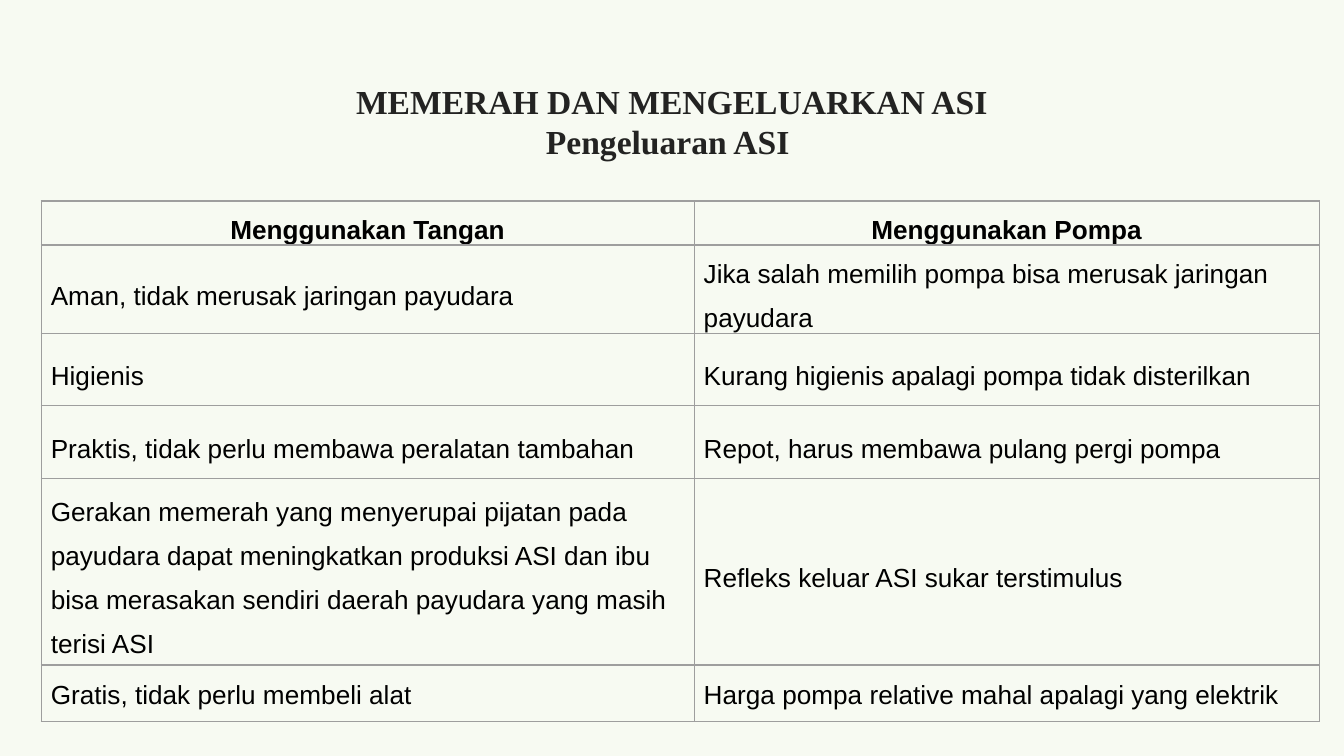
from dataclasses import dataclass

from lxml import etree
from pptx import Presentation
from pptx import util as u
from pptx.dml import color
from pptx.enum import text
from pptx.oxml import ns


@dataclass(frozen=True)
class Theme:
    background: str = "F7FAF2"
    title_color: str = "232322"
    body_color: str = "000000"
    border_color: str = "9E9E9E"
    title_font: str = "Times New Roman"
    body_font: str = "Arial"
    title_size: int = 18
    body_size: int = 14
    border_width: float = 0.75


TITLE = "MEMERAH DAN MENGELUARKAN ASI\vPengeluaran ASI "
COLUMN_WIDTHS = (12.34, 11.81)
ROWS = (
    (0.64, 1.5, "Menggunakan Tangan", "Menggunakan Pompa"),
    (1.37, 1.5, "Aman, tidak merusak jaringan payudara",
     "Jika salah memilih pompa bisa merusak jaringan payudara"),
    (1.37, 1.5, "Higienis", "Kurang higienis apalagi pompa tidak disterilkan"),
    (1.37, 1.5, "Praktis, tidak perlu membawa peralatan tambahan",
     "Repot, harus membawa pulang pergi pompa"),
    (3.53, 1.5, "Gerakan memerah yang menyerupai pijatan pada payudara dapat "
     "meningkatkan produksi ASI dan ibu bisa merasakan sendiri daerah payudara "
     "yang masih terisi ASI", "Refleks keluar ASI sukar terstimulus"),
    (1.07, 1.15, "Gratis, tidak perlu membeli alat",
     "Harga pompa relative mahal apalagi yang elektrik"),
)


class SlideBuilder:
    def __init__(self, slide, theme):
        self.slide = slide
        self.theme = theme
        fill = slide.background.fill
        fill.solid()
        fill.fore_color.rgb = color.RGBColor.from_string(theme.background)

    def format_runs(self, paragraph, font_name, size, font_color, bold):
        for run in paragraph.runs:
            run.font.name = font_name
            run.font.size = u.Pt(size)
            run.font.bold = bold
            run.font.color.rgb = color.RGBColor.from_string(font_color)

    def title(self, content, left, top, width, height):
        shape = self.slide.shapes.title
        shape.left, shape.top = u.Cm(left), u.Cm(top)
        shape.width, shape.height = u.Cm(width), u.Cm(height)
        frame = shape.text_frame
        frame.text = content
        frame.word_wrap = True
        frame.auto_size = text.MSO_AUTO_SIZE.NONE
        frame.vertical_anchor = text.MSO_ANCHOR.MIDDLE
        frame.margin_left = frame.margin_right = u.Cm(0.25)
        frame.margin_top = frame.margin_bottom = u.Cm(0.25)
        paragraph = frame.paragraphs[0]
        paragraph.alignment = text.PP_ALIGN.CENTER
        self.format_runs(paragraph, self.theme.title_font, self.theme.title_size,
                         self.theme.title_color, True)

    def borders(self, cell):
        properties = cell._tc.get_or_add_tcPr()
        for side in ("lnL", "lnR", "lnT", "lnB"):
            line = etree.SubElement(properties, ns.qn(f"a:{side}"),
                                    w=str(u.Pt(self.theme.border_width)))
            fill = etree.SubElement(line, ns.qn("a:solidFill"))
            etree.SubElement(fill, ns.qn("a:srgbClr"), val=self.theme.border_color)

    def cell(self, cell, content, spacing, header):
        self.borders(cell)
        cell.fill.background()
        cell.vertical_anchor = text.MSO_ANCHOR.MIDDLE
        cell.margin_left = cell.margin_right = u.Cm(0.18)
        cell.margin_top = cell.margin_bottom = 0
        cell.text_frame.text = content
        paragraph = cell.text_frame.paragraphs[0]
        paragraph.alignment = text.PP_ALIGN.CENTER if header else text.PP_ALIGN.LEFT
        paragraph.line_spacing = spacing
        self.format_runs(paragraph, self.theme.body_font, self.theme.body_size,
                         self.theme.body_color, header)

    def table(self, rows, widths, left, top):
        height = sum(row[0] for row in rows)
        table = self.slide.shapes.add_table(
            len(rows), len(widths), u.Cm(left), u.Cm(top),
            u.Cm(sum(widths)), u.Cm(height)).table
        table.first_row = table.horz_banding = False
        for column, width in zip(table.columns, widths):
            column.width = u.Cm(width)
        for index, (row_height, spacing, *contents) in enumerate(rows):
            table.rows[index].height = u.Cm(row_height)
            for cell, content in zip(table.rows[index].cells, contents):
                self.cell(cell, content, spacing, index == 0)


def main():
    presentation = Presentation()
    presentation.slide_width = u.Cm(25.4)
    presentation.slide_height = u.Cm(14.29)
    slide = presentation.slides.add_slide(presentation.slide_layouts[5])
    builder = SlideBuilder(slide, Theme())
    builder.title(TITLE, 2, 1.5, 21.4, 1.58)
    builder.table(ROWS, COLUMN_WIDTHS, 0.78, 3.8)
    presentation.save("out.pptx")


if __name__ == "__main__":
    main()
